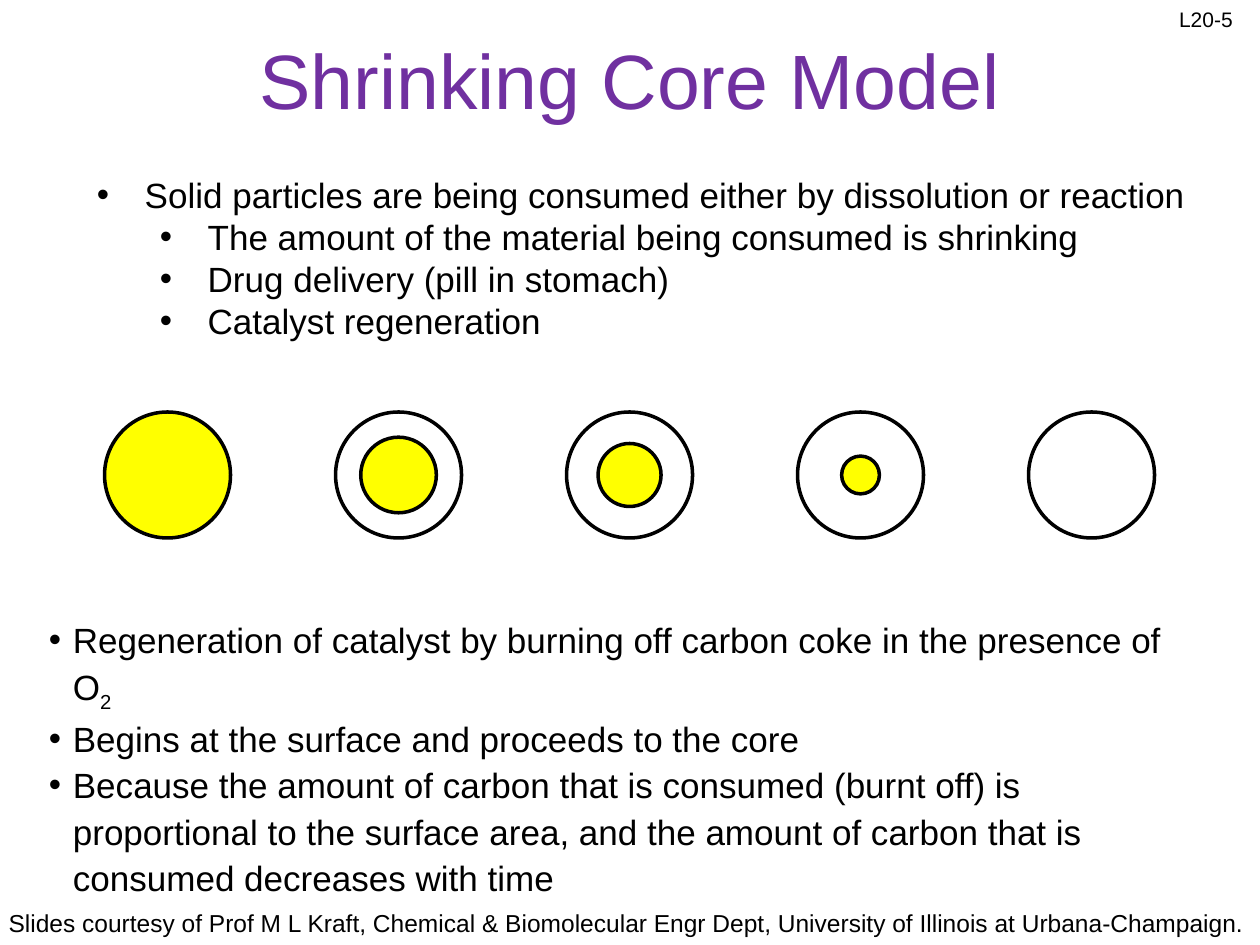
from dataclasses import dataclass

from lxml import etree
from pptx import Presentation
from pptx.dml.color import RGBColor
from pptx.enum import shapes, text
from pptx.oxml import ns
from pptx.util import Inches, Pt


@dataclass(frozen=True)
class Theme:
    font: str = "Arial"
    ink: RGBColor = RGBColor(0, 0, 0)
    title: RGBColor = RGBColor(0x70, 0x30, 0xA0)
    core: RGBColor = RGBColor(0xFF, 0xFF, 0)
    title_size: int = 44
    body_size: int = 20
    credit_size: int = 14
    number_size: int = 12
    outline: int = 2


THEME = Theme()


def style(paragraph, size, color=THEME.ink):
    paragraph.font.name = THEME.font
    paragraph.font.size = Pt(size)
    paragraph.font.color.rgb = color


def add_box(slide, left, top, width, height, wrap=True):
    shape = slide.shapes.add_textbox(
        Inches(left), Inches(top), Inches(width), Inches(height))
    shape.text_frame.word_wrap = wrap
    return shape.text_frame


def add_label(slide, words, bounds, size):
    frame = add_box(slide, *bounds, wrap=False)
    frame.auto_size = text.MSO_AUTO_SIZE.SHAPE_TO_FIT_TEXT
    frame.text = words
    style(frame.paragraphs[0], size)


def add_title(slide, words):
    frame = add_box(slide, 0, 0, 10, 1.25)
    frame.vertical_anchor = text.MSO_ANCHOR.MIDDLE
    frame.text = words
    paragraph = frame.paragraphs[0]
    paragraph.alignment = text.PP_ALIGN.CENTER
    style(paragraph, THEME.title_size, THEME.title)


def set_bullet(paragraph, margin, hanging):
    properties = paragraph._p.get_or_add_pPr()
    properties.set("marL", str(Inches(margin)))
    properties.set("indent", str(-Inches(hanging)))
    font = etree.SubElement(properties, ns.qn("a:buFont"))
    font.set("typeface", THEME.font)
    etree.SubElement(properties, ns.qn("a:buChar")).set("char", "•")


def add_bullets(frame, items, hanging, level_step=0.5, spacing=None):
    for index, (level, words, subscript) in enumerate(items):
        paragraph = frame.paragraphs[0] if index == 0 else frame.add_paragraph()
        paragraph.level = level
        set_bullet(paragraph, hanging + level * level_step, hanging)
        if spacing:
            paragraph.line_spacing = spacing
        style(paragraph, THEME.body_size)
        paragraph.add_run().text = words
        if subscript:
            run = paragraph.add_run()
            run.text = subscript
            run._r.get_or_add_rPr().set("baseline", "-25000")


def add_circle(parent, center_x, center_y, diameter, color=None):
    circle = parent.shapes.add_shape(
        shapes.MSO_SHAPE.OVAL,
        Inches(center_x - diameter / 2), Inches(center_y - diameter / 2),
        Inches(diameter), Inches(diameter))
    circle.shadow.inherit = False
    if color is None:
        circle.fill.background()
    else:
        circle.fill.solid()
        circle.fill.fore_color.rgb = color
    circle.line.color.rgb = THEME.ink
    circle.line.width = Pt(THEME.outline)


def add_particle(slide, center_x, center_y, core, diameter=1):
    if core == diameter:
        add_circle(slide, center_x, center_y, diameter, THEME.core)
    elif core == 0:
        add_circle(slide, center_x, center_y, diameter)
    else:
        group = slide.shapes.add_group_shape()
        add_circle(group, center_x, center_y, diameter)
        add_circle(group, center_x, center_y, core, THEME.core)


def main():
    presentation = Presentation()
    presentation.slide_width = Inches(10)
    presentation.slide_height = Inches(7.5)
    slide = presentation.slides.add_slide(presentation.slide_layouts[6])

    add_label(slide, "L20-5", (9.26, 0, 0.74, 0.3), THEME.number_size)
    add_label(
        slide,
        "Slides courtesy of Prof M L Kraft, Chemical & Biomolecular Engr Dept, "
        "University of Illinois at Urbana-Champaign.",
        (-0.03, 7.16, 10.06, 0.34), THEME.credit_size)
    add_title(slide, "Shrinking Core Model")

    add_bullets(add_box(slide, 0.67, 1.33, 9.21, 1.58), [
        (0, "Solid particles are being consumed either by dissolution or reaction", ""),
        (1, "The amount of the material being consumed is shrinking", ""),
        (1, "Drug delivery (pill in stomach)", ""),
        (1, "Catalyst regeneration", ""),
    ], hanging=0.38)

    first_center, pitch = 1.33, 5.5 / 3
    for index, core in enumerate((1, 0.6, 0.5, 0.3, 0)):
        add_particle(slide, first_center + index * pitch, 3.77, core)

    regeneration = add_box(slide, 0.29, 4.83, 9.4, 1.95)
    regeneration.auto_size = text.MSO_AUTO_SIZE.SHAPE_TO_FIT_TEXT
    add_bullets(regeneration, [
        (0, "Regeneration of catalyst by burning off carbon coke in the presence of O", "2"),
        (0, "Begins at the surface and proceeds to the core", ""),
        (0, "Because the amount of carbon that is consumed (burnt off) is proportional "
            "to the surface area, and the amount of carbon that is consumed decreases "
            "with time", ""),
    ], hanging=0.19, spacing=1.1)

    presentation.save("out.pptx")


if __name__ == "__main__":
    main()
